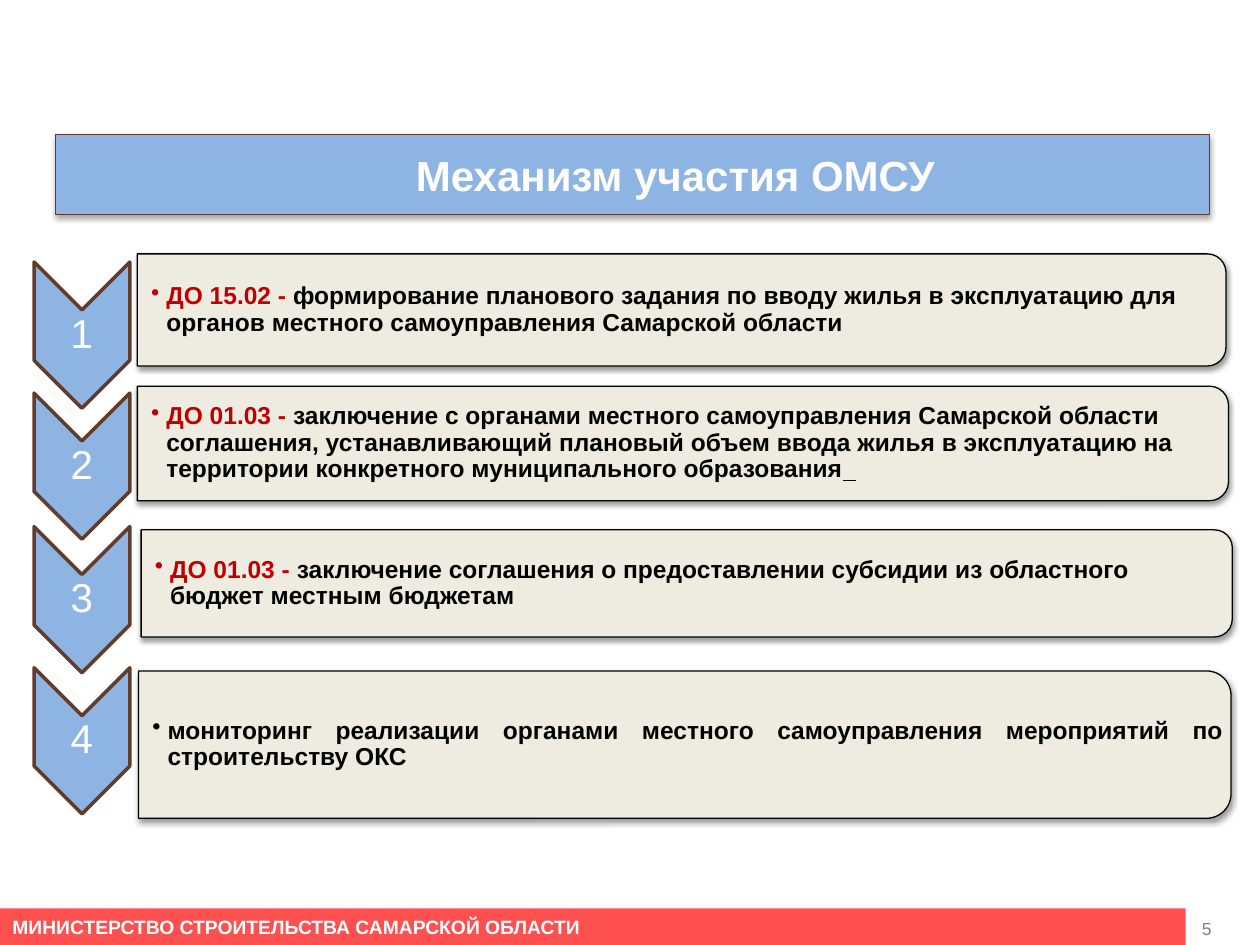
"""Builds the slide on how local authorities take part in the housing plan."""
from dataclasses import dataclass

import pptx
import pptx.dml.color
import pptx.enum.shapes
import pptx.enum.text
import pptx.oxml.ns
import pptx.util
from lxml import etree

Inches = pptx.util.Inches
Pt = pptx.util.Pt
SHAPE = pptx.enum.shapes.MSO_SHAPE
ALIGN = pptx.enum.text.PP_ALIGN
ANCHOR = pptx.enum.text.MSO_ANCHOR


@dataclass(frozen=True)
class Theme:
    font: str = "Arial"
    blue: str = "8EB4E3"
    brown: str = "623B2A"
    beige: str = "EEECE1"
    red: str = "FF5050"
    deadline: str = "C00000"
    black: str = "000000"
    white: str = "FFFFFF"
    grey: str = "808080"
    title_size: int = 24
    number_size: int = 23
    step_size: int = 14
    footer_size: int = 11
    page_size: int = 10


@dataclass(frozen=True)
class Step:
    chevron_y: float
    left: float
    middle: float
    width: float
    height: float
    deadline: str
    action: str
    blank: str = ""
    align: ALIGN = ALIGN.LEFT


THEME = Theme()
STEPS = (
    Step(2.66, 1.09, 2.46, 8.64, 0.89, "ДО 15.02 - ",
         "формирование планового задания по вводу жилья в эксплуатацию "
         "для органов местного самоуправления Самарской области"),
    Step(3.7, 1.09, 3.52, 8.66, 0.91, "ДО 01.03 - ",
         "заключение с органами местного самоуправления Самарской области "
         "соглашения, устанавливающий плановый объем ввода жилья в эксплуатацию "
         "на территории конкретного муниципального образования", blank="  "),
    Step(4.76, 1.12, 4.63, 8.66, 0.85, "ДО 01.03 - ",
         "заключение соглашения о предоставлении субсидии из областного "
         "бюджет местным бюджетам"),
    Step(5.88, 1.1, 5.91, 8.67, 1.17, "",
         "мониторинг реализации органами местного самоуправления мероприятий "
         "по строительству ОКС", align=ALIGN.JUSTIFY),
)


def rgb(colour):
    """Return a colour object for a hex string."""
    return pptx.dml.color.RGBColor.from_string(colour)


def paint(shape, fill, line=None, width=0.75):
    """Set the fill and outline of a shape and clear its shadow."""
    shape.shadow.inherit = False
    shape.fill.solid()
    shape.fill.fore_color.rgb = rgb(fill)
    if line:
        shape.line.color.rgb = rgb(line)
        shape.line.width = Pt(width)
    else:
        shape.line.fill.background()


def add_shadow(shape, opacity, distance):
    """Give a shape a soft shadow falling straight down."""
    qn = pptx.oxml.ns.qn
    effects = shape.element.spPr.find(qn("a:effectLst"))
    shadow = etree.SubElement(effects, qn("a:outerShdw"), blurRad=str(Pt(3.1)),
                              dist=str(Pt(distance)), dir="5400000", rotWithShape="0")
    colour = etree.SubElement(shadow, qn("a:srgbClr"), val=THEME.black)
    etree.SubElement(colour, qn("a:alpha"), val=str(opacity * 1000))


def style(paragraph, size, colour, bold=False, align=ALIGN.LEFT):
    """Set the alignment and font of a whole paragraph."""
    paragraph.alignment = align
    font = paragraph.font
    font.name, font.size, font.bold = THEME.font, Pt(size), bold
    font.color.rgb = rgb(colour)


def set_frame(frame, anchor, margins=None):
    """Make a text frame wrap and set its anchor and inner margins."""
    frame.word_wrap = True
    frame.auto_size = pptx.enum.text.MSO_AUTO_SIZE.NONE
    frame.vertical_anchor = anchor
    if margins:
        (frame.margin_left, frame.margin_top,
         frame.margin_right, frame.margin_bottom) = map(Inches, margins)


def add_text_box(slide, box, anchor, margins=None):
    """Add a text box and return its first paragraph."""
    frame = slide.shapes.add_textbox(*map(Inches, box)).text_frame
    set_frame(frame, anchor, margins)
    return frame.paragraphs[0]


def add_turned(slide, kind, centre_x, centre_y, width, height):
    """Add a shape turned a quarter clockwise, sized as it appears."""
    shape = slide.shapes.add_shape(
        kind, Inches(centre_x - height / 2), Inches(centre_y - width / 2),
        Inches(height), Inches(width))
    shape.rotation = 90
    return shape


def add_title(slide):
    """Turn the title placeholder into the banner."""
    title = slide.shapes.title
    title.left, title.top, title.width, title.height = map(
        Inches, (0.44, 1.07, 9.16, 0.63))
    paint(title, THEME.blue, THEME.brown)
    add_shadow(title, 35, 1.8)
    title.text_frame.text = "Механизм участия ОМСУ"
    set_frame(title.text_frame, ANCHOR.MIDDLE)
    heading = title.text_frame.paragraphs[0]
    heading._p.get_or_add_pPr().set("indent", str(Inches(0.68)))
    style(heading, THEME.title_size, THEME.white, True, ALIGN.CENTER)


def add_marker(slide, number, centre_y):
    """Add a numbered chevron pointing down."""
    chevron = add_turned(slide, SHAPE.CHEVRON, 0.65, centre_y, 0.76, 1.16)
    paint(chevron, THEME.blue, THEME.brown, 2)
    label = add_text_box(slide, (0.27, centre_y - 0.2, 0.76, 0.4),
                         ANCHOR.MIDDLE, (0.02,) * 4)
    label.text = str(number)
    label.line_spacing = 0.9
    style(label, THEME.number_size, THEME.white, align=ALIGN.CENTER)


def add_panel(slide, step):
    """Add the rounded panel of a step with its bulleted text."""
    panel = add_turned(slide, SHAPE.ROUND_2_SAME_RECTANGLE,
                       step.left + step.width / 2, step.middle, step.width, step.height)
    paint(panel, THEME.beige, THEME.black)
    add_shadow(panel, 38, 1.6)
    task = add_text_box(
        slide, (step.left, step.middle - step.height / 2, step.width - 0.05, step.height),
        ANCHOR.MIDDLE, (0.11, 0.01, 0.01, 0.01))
    task.level = 1
    task.line_spacing = 0.9
    properties = task._p.get_or_add_pPr()
    properties.set("marL", str(Inches(0.12)))
    properties.set("indent", str(Inches(-0.12)))
    etree.SubElement(properties, pptx.oxml.ns.qn("a:buChar"), char="•")
    style(task, THEME.step_size, THEME.black, True, step.align)
    if step.deadline:
        deadline = task.add_run()
        deadline.text = step.deadline
        deadline.font.color.rgb = rgb(THEME.deadline)
    task.add_run().text = step.action
    if step.blank:
        blank = task.add_run()
        blank.text = step.blank
        blank.font.underline = True


def add_footer(slide):
    """Add the ministry bar and the page number."""
    bar = slide.shapes.add_shape(
        SHAPE.RECTANGLE, *map(Inches, (0, 7.21, 9.41, 0.29)))
    paint(bar, THEME.red)
    set_frame(bar.text_frame, ANCHOR.MIDDLE)
    ministry = bar.text_frame.paragraphs[0]
    ministry.text = "МИНИСТЕРСТВО СТРОИТЕЛЬСТВА САМАРСКОЙ ОБЛАСТИ"
    style(ministry, THEME.footer_size, THEME.white, True)
    page = add_text_box(slide, (9.44, 7.1, 0.56, 0.4), ANCHOR.BOTTOM)
    page.text = "5"
    style(page, THEME.page_size, THEME.grey)


def main():
    """Build and save the slide."""
    deck = pptx.Presentation()
    deck.slide_width, deck.slide_height = Inches(10), Inches(7.5)
    slide = deck.slides.add_slide(deck.slide_layouts.get_by_name("Title Only"))
    add_title(slide)
    for number, step in enumerate(STEPS, start=1):
        add_marker(slide, number, step.chevron_y)
        add_panel(slide, step)
    add_footer(slide)
    deck.save("out.pptx")


if __name__ == "__main__":
    main()
